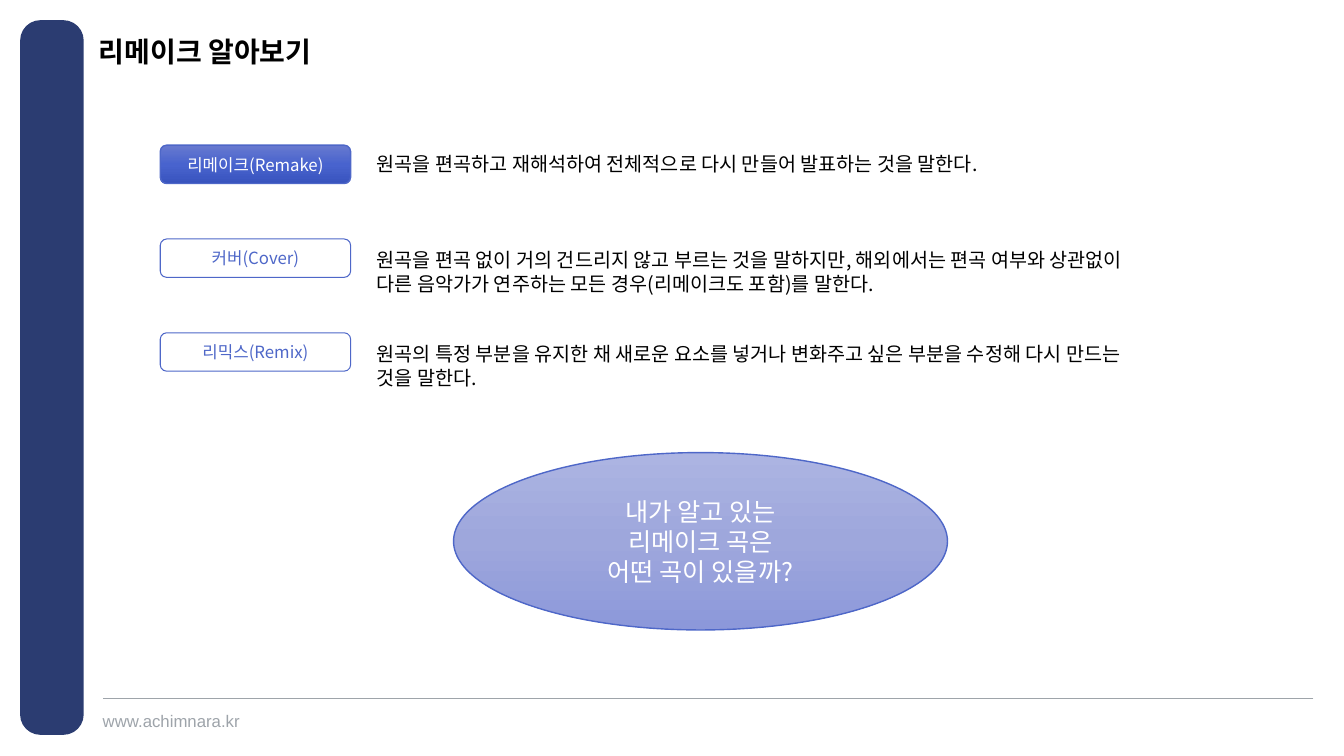
"""Build the slide that explains remake, cover and remix."""
from copy import deepcopy

from lxml import etree
from pptx import Presentation
from pptx.dml.color import RGBColor
from pptx.enum.shapes import MSO_CONNECTOR, MSO_SHAPE
from pptx.enum.text import MSO_ANCHOR, MSO_AUTO_SIZE, PP_ALIGN
from pptx.oxml.ns import qn
from pptx.util import Pt

LEFT, CENTER = PP_ALIGN.LEFT, PP_ALIGN.CENTER
TOP, MIDDLE = MSO_ANCHOR.TOP, MSO_ANCHOR.MIDDLE
ROUNDED, OVAL = MSO_SHAPE.ROUNDED_RECTANGLE, MSO_SHAPE.OVAL
KOREAN = "Noto Sans CJK KR"
COLORS = {"navy": "2B3C71", "blue": "4E67C8", "gray": "9EA4AA", "black": "000000", "white": "FFFFFF"}
STRONG = ["687ACF", "4863CE", "3954BE"]
PALE = ["ACB4E2", "9EA7DC", "8C98DA"]


def write(shape, text, size=14, color="black", font=KOREAN, bold=False, align=LEFT,
          anchor=TOP, inset=None, wrap=True, spacing=None):
    """Fill a shape with formatted text, one paragraph a line."""
    frame = shape.text_frame
    frame.auto_size = MSO_AUTO_SIZE.NONE
    frame.word_wrap = wrap
    frame.vertical_anchor = anchor
    if inset is not None:
        frame.margin_left = frame.margin_right = Pt(inset)
        frame.margin_top = frame.margin_bottom = Pt(inset)
    for index, line in enumerate(text.split("\n")):
        para = frame.add_paragraph() if index else frame.paragraphs[0]
        para.alignment = align
        para.space_before = Pt(0)
        if spacing:
            para.line_spacing = spacing
        span = para.add_run()
        span.text = line
        span.font.size = Pt(size)
        span.font.bold = bold
        span.font.name = font
        span.font.color.rgb = RGBColor.from_string(COLORS[color])
        east_asian = etree.SubElement(span.font._element, qn("a:ea"))
        east_asian.set("typeface", KOREAN)


def add_panel(kind, left, top, width, height, gradient=None, line_width=0.75):
    """Add an outlined shape with an optional vertical gradient."""
    panel = page.shapes.add_shape(kind, Pt(left), Pt(top), Pt(width), Pt(height))
    panel.shadow.inherit = False
    panel.line.color.rgb = RGBColor.from_string(COLORS["blue"])
    panel.line.width = Pt(line_width)
    if gradient is None:
        panel.fill.background()
        return panel
    panel.fill.gradient()
    panel.fill.gradient_angle = 270
    stop_list = panel._element.spPr.find(".//" + qn("a:gsLst"))
    stop_list.append(deepcopy(stop_list[0]))
    for index, stop in enumerate(panel.fill.gradient_stops):
        stop.position = index / 2
        stop.color.rgb = RGBColor.from_string(gradient[index])
    return panel


deck = Presentation()
deck.slide_width, deck.slide_height = Pt(960), Pt(540)
page = deck.slides.add_slide(deck.slide_layouts[5])

sidebar = add_panel(ROUNDED, 14.4, 14.4, 45.4, 510.5)
sidebar.adjustments[0] = 0.32
sidebar.fill.solid()
sidebar.fill.fore_color.rgb = RGBColor.from_string(COLORS["navy"])
sidebar.line.fill.background()

rule = page.shapes.add_connector(MSO_CONNECTOR.STRAIGHT, Pt(938.2), Pt(499), Pt(73.4), Pt(499))
rule.line.color.rgb = RGBColor.from_string(COLORS["gray"])
rule.line.width = Pt(0.5)
etree.SubElement(rule._element.spPr, qn("a:effectLst"))

website = page.shapes.add_textbox(Pt(73.4), Pt(507.6), Pt(108), Pt(14.4))
write(website, "www.achimnara.kr", size=12, color="gray", font="Arial", inset=0)

title = page.shapes.title
title.left, title.top, title.width, title.height = Pt(70.6), Pt(28.1), Pt(566.6), Pt(20.2)
write(title, "리메이크 알아보기", size=20, font="Arial", bold=True, anchor=MIDDLE, inset=0, spacing=0.9)

terms = [
    ("리메이크(Remake)", "원곡을 편곡하고 재해석하여 전체적으로 다시 만들어 발표하는 것을 말한다.",
     STRONG, "white", 1, 1.4, 24.5),
    ("커버(Cover)", "원곡을 편곡 없이 거의 건드리지 않고 부르는 것을 말하지만, 해외에서는 편곡 여부와 상관없이 "
     "다른 음악가가 연주하는 모든 경우(리메이크도 포함)를 말한다.", None, "blue", 0.75, 2.9, 41),
    ("리믹스(Remix)", "원곡의 특정 부분을 유지한 채 새로운 요소를 넣거나 변화주고 싶은 부분을 수정해 "
     "다시 만드는 것을 말한다.", None, "blue", 0.75, 2.9, 41),
]
for row, (term, meaning, gradient, color, line_width, offset, height) in enumerate(terms):
    top = 103.7 + 67 * row
    label = add_panel(ROUNDED, 114.5, top, 136, 27.4, gradient, line_width)
    write(label, term, size=12, color=color, align=CENTER, anchor=MIDDLE)
    box = page.shapes.add_textbox(Pt(262.1), Pt(top + offset), Pt(566), Pt(height))
    write(box, meaning, wrap=row > 0, spacing=Pt(17))

question = add_panel(OVAL, 324, 323.3, 352.8, 126.7, PALE, 1)
write(question, "내가 알고 있는\n리메이크 곡은\n어떤 곡이 있을까?", size=18, color="white",
      align=CENTER, anchor=MIDDLE, spacing=Pt(21.5))

deck.save("out.pptx")
